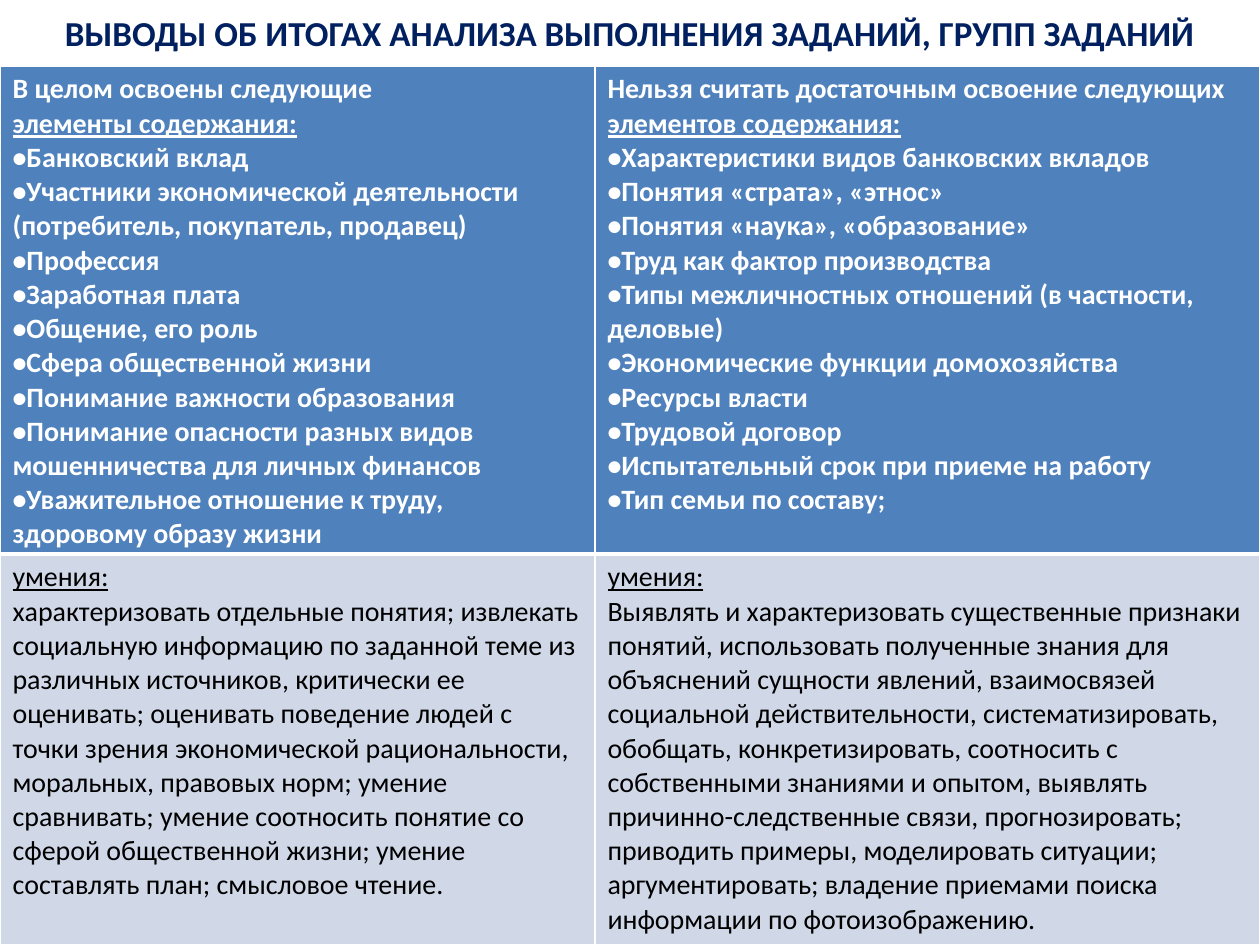
from dataclasses import dataclass

from lxml import etree
from pptx import Presentation
from pptx.dml.color import RGBColor
from pptx.enum.text import MSO_ANCHOR, PP_ALIGN
from pptx.oxml.ns import qn
from pptx.util import Emu, Pt

CENTER = PP_ALIGN.CENTER
LEFT = PP_ALIGN.LEFT
MIDDLE = MSO_ANCHOR.MIDDLE
EMU_PER_PX = 914400 / 126


@dataclass(frozen=True)
class Theme:
    font: str = "Calibri"
    title_size: int = 20
    body_size: int = 16
    title: str = "002060"
    header_fill: str = "4F81BD"
    header_text: str = "FFFFFF"
    skills_fill: str = "D0D8E8"
    skills_text: str = "000000"
    border: str = "FFFFFF"
    thin: int = 1
    thick: int = 3


@dataclass(frozen=True)
class Span:
    text: str
    underline: bool = False


@dataclass(frozen=True)
class RowStyle:
    height: int
    fill: str
    color: str
    bold: bool
    top: int
    bottom: int


THEME = Theme()
SLIDE_WIDTH, SLIDE_HEIGHT = 1260, 945
TITLE_HEIGHT = 66
COLUMN_WIDTHS = (595, 665)
ROW_STYLES = (
    RowStyle(488, THEME.header_fill, THEME.header_text, True, THEME.thin, THEME.thick),
    RowStyle(391, THEME.skills_fill, THEME.skills_text, False, THEME.thick, THEME.thin),
)

# Content: each paragraph is a list of spans
Paragraphs = list[list[Span]]


def bulleted(*items: str) -> Paragraphs:
    return [[Span(f"•{item}")] for item in items]


def skills(description: str) -> Paragraphs:
    return [[Span("умения:", underline=True)], [Span(description)]]


MASTERED = [
    [Span("В целом освоены следующие")],
    [Span("элементы содержания:", underline=True)],
] + bulleted(
    "Банковский вклад",
    "Участники экономической деятельности (потребитель, покупатель, продавец)",
    "Профессия",
    "Заработная плата",
    "Общение, его роль",
    "Сфера общественной жизни",
    "Понимание важности образования",
    "Понимание опасности разных видов мошенничества для личных финансов",
    "Уважительное отношение к труду, здоровому образу жизни",
)
NOT_MASTERED = [
    [
        Span("Нельзя считать достаточным освоение следующих "),
        Span("элементов содержания:", underline=True),
    ],
] + bulleted(
    "Характеристики видов банковских вкладов",
    "Понятия «страта», «этнос»",
    "Понятия «наука», «образование»",
    "Труд как фактор производства",
    "Типы межличностных отношений (в частности, деловые)",
    "Экономические функции домохозяйства",
    "Ресурсы власти",
    "Трудовой договор",
    "Испытательный срок при приеме на работу",
    "Тип семьи по составу;",
)
MASTERED_SKILLS = skills(
    "характеризовать отдельные понятия; извлекать социальную информацию по заданной "
    "теме из различных источников, критически ее оценивать; оценивать поведение людей "
    "с точки зрения экономической рациональности, моральных, правовых норм; умение "
    "сравнивать; умение соотносить понятие со сферой общественной жизни; умение "
    "составлять план; смысловое чтение."
)
NOT_MASTERED_SKILLS = skills(
    "Выявлять и характеризовать существенные признаки понятий, использовать полученные "
    "знания для объяснений сущности явлений, взаимосвязей социальной действительности, "
    "систематизировать, обобщать, конкретизировать, соотносить с собственными знаниями "
    "и опытом, выявлять причинно-следственные связи, прогнозировать; приводить примеры, "
    "моделировать ситуации; аргументировать; владение приемами поиска информации по "
    "фотоизображению."
)
CONCLUSIONS = ((MASTERED, NOT_MASTERED), (MASTERED_SKILLS, NOT_MASTERED_SKILLS))


def px(length: int) -> Emu:
    return Emu(round(length * EMU_PER_PX))


def write_text(frame, paragraphs: Paragraphs, *, size: int, color: str,
               bold: bool = False, align=LEFT) -> None:
    frame.word_wrap = True
    for index, spans in enumerate(paragraphs):
        paragraph = frame.add_paragraph() if index else frame.paragraphs[0]
        paragraph.alignment = align
        for span in spans:
            run = paragraph.add_run()
            run.text = span.text
            run.font.name = THEME.font
            run.font.size = Pt(size)
            run.font.bold = bold
            run.font.underline = span.underline
            run.font.color.rgb = RGBColor.from_string(color)


def add_borders(cell, *, top: int, bottom: int) -> None:
    properties = cell._tc.get_or_add_tcPr()
    widths = {"a:lnL": THEME.thin, "a:lnR": THEME.thin, "a:lnT": top, "a:lnB": bottom}
    for tag, width in widths.items():
        line = etree.SubElement(properties, qn(tag), w=str(Pt(width)))
        solid = etree.SubElement(line, qn("a:solidFill"))
        etree.SubElement(solid, qn("a:srgbClr"), val=THEME.border)


def add_title(slide, title: str) -> None:
    box = slide.shapes.add_textbox(0, 0, px(SLIDE_WIDTH), px(TITLE_HEIGHT))
    box.text_frame.vertical_anchor = MIDDLE
    write_text(box.text_frame, [[Span(title)]], size=THEME.title_size,
               color=THEME.title, bold=True, align=CENTER)


def add_conclusions(slide) -> None:
    table = slide.shapes.add_table(
        len(ROW_STYLES), len(COLUMN_WIDTHS), 0, px(TITLE_HEIGHT),
        px(SLIDE_WIDTH), px(SLIDE_HEIGHT - TITLE_HEIGHT),
    ).table
    for column, width in zip(table.columns, COLUMN_WIDTHS):
        column.width = px(width)
    for row, style, contents in zip(table.rows, ROW_STYLES, CONCLUSIONS):
        row.height = px(style.height)
        for cell, paragraphs in zip(row.cells, contents):
            # Borders come before the fill in the cell properties
            add_borders(cell, top=style.top, bottom=style.bottom)
            cell.fill.solid()
            cell.fill.fore_color.rgb = RGBColor.from_string(style.fill)
            write_text(cell.text_frame, paragraphs, size=THEME.body_size,
                       color=style.color, bold=style.bold)


def main() -> None:
    presentation = Presentation()
    presentation.slide_width = px(SLIDE_WIDTH)
    presentation.slide_height = px(SLIDE_HEIGHT)
    slide = presentation.slides.add_slide(presentation.slide_layouts[6])
    add_title(slide, "ВЫВОДЫ ОБ ИТОГАХ АНАЛИЗА ВЫПОЛНЕНИЯ ЗАДАНИЙ, ГРУПП ЗАДАНИЙ")
    add_conclusions(slide)
    presentation.save("out.pptx")


if __name__ == "__main__":
    main()
